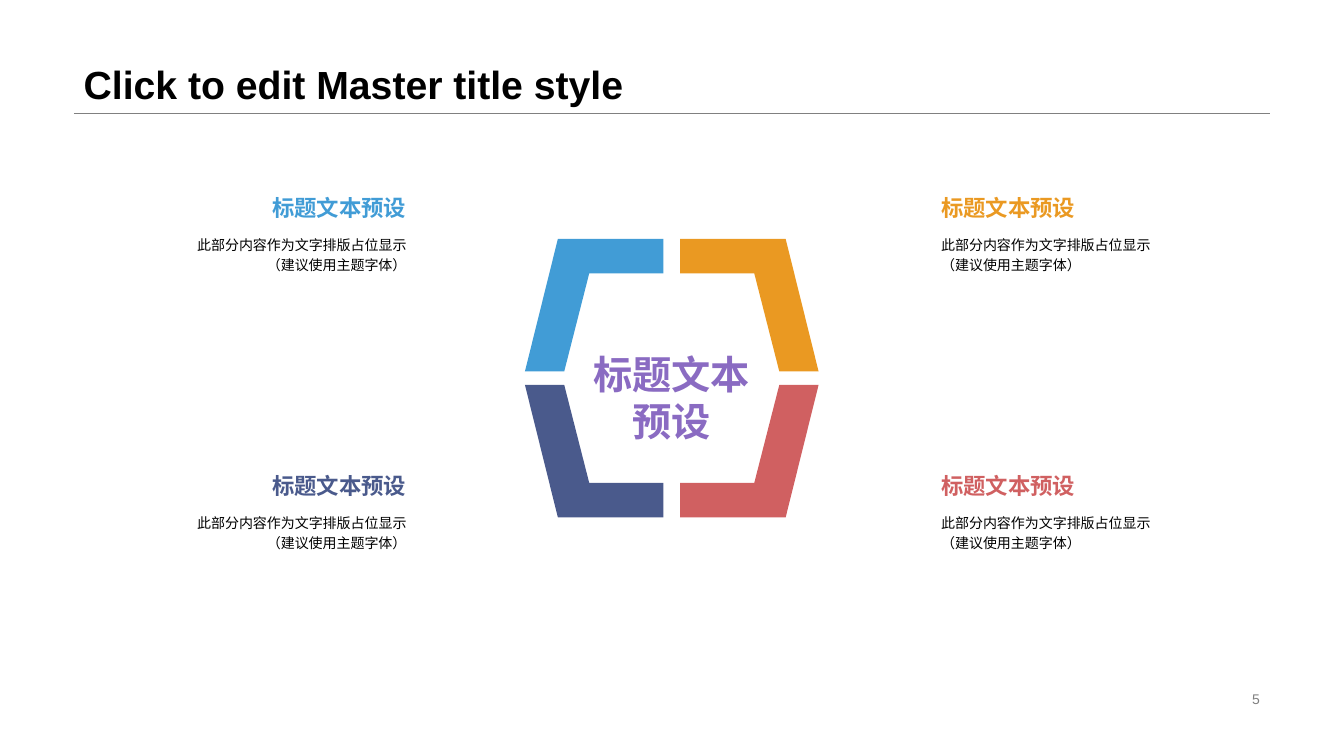
from pptx import Presentation
from pptx.dml.color import RGBColor
from pptx.enum.shapes import MSO_CONNECTOR
from pptx.enum.text import MSO_ANCHOR as Anchor, PP_ALIGN as Align
from pptx.oxml.ns import qn
from pptx.util import Cm, Pt
from lxml.etree import SubElement

BLACK = RGBColor(0x00, 0x00, 0x00)
GRAY = RGBColor(0x80, 0x80, 0x80)
BLUE = RGBColor(0x41, 0x9C, 0xD6)
ORANGE = RGBColor(0xEA, 0x99, 0x22)
NAVY = RGBColor(0x4A, 0x5A, 0x8C)
RED = RGBColor(0xD0, 0x60, 0x61)
PURPLE = RGBColor(0x8A, 0x6B, 0xC2)

HEADLINE = "Click to edit Master title style"
PAGE_NUMBER = "5"
CORE = ["标题文本", "预设"]
TOPIC = ["标题文本预设"]
DETAIL = ["此部分内容作为文字排版占位显示", "（建议使用主题字体）"]
QUADRANTS = [(-1, -1, BLUE), (1, -1, ORANGE), (-1, 1, NAVY), (1, 1, RED)]

CENTER_X, CENTER_Y = 16.93, 9.53
ARM = [(0.21, 3.51), (2.87, 3.51), (3.7, 0.17),
       (2.71, 0.17), (2.08, 2.64), (0.21, 2.64)]
COLUMNS = {-1: (3.76, 6.68, Align.RIGHT), 1: (23.52, 6.83, Align.LEFT)}
ROWS = {-1: 4.88, 1: 11.89}
TOPIC_HEIGHT, DETAIL_HEIGHT = 0.69, 1.63
TIGHT = (0.2, 0)
NORMAL = (0.25, 0.13)

deck = Presentation()
deck.slide_width, deck.slide_height = Cm(33.87), Cm(19.05)
slide = deck.slides.add_slide(deck.slide_layouts[6])


def add_text(lines, box, size, color, bold=False, align=Align.LEFT,
             anchor=Anchor.TOP, insets=NORMAL, wrap=True, spacing=1.0):
    frame = slide.shapes.add_textbox(*map(Cm, box)).text_frame
    frame.word_wrap = wrap
    frame.vertical_anchor = anchor
    frame.margin_left = frame.margin_right = Cm(insets[0])
    frame.margin_top = frame.margin_bottom = Cm(insets[1])
    paragraph = frame.paragraphs[0]
    paragraph.alignment = align
    paragraph.line_spacing = spacing
    for index, line in enumerate(lines):
        if index:
            paragraph.add_line_break()
        run = paragraph.add_run()
        run.text = line
        run.font.name = "Arial"
        run.font.size = Pt(size)
        run.font.bold = bold
        run.font.color.rgb = color


def add_arm(side, level, color):
    points = [(Cm(CENTER_X + side * x), Cm(CENTER_Y + level * y)) for x, y in ARM]
    builder = slide.shapes.build_freeform(*points[0], scale=1.0)
    builder.add_line_segments(points[1:], close=True)
    arm = builder.convert_to_shape()
    arm.shadow.inherit = False
    arm.fill.solid()
    arm.fill.fore_color.rgb = color
    arm.line.fill.background()


rule = slide.shapes.add_connector(
    MSO_CONNECTOR.STRAIGHT, Cm(1.86), Cm(2.86), Cm(32), Cm(2.86))
rule.line.color.rgb = GRAY
rule.line.width = Pt(0.25)
SubElement(rule.element.spPr, qn("a:effectLst"))

add_text([HEADLINE], (1.86, 0, 30.14, 2.86), 28, BLACK, bold=True,
         anchor=Anchor.BOTTOM, spacing=0.9)
add_text([PAGE_NUMBER], (23.92, 17.32, 8.08, 0.58), 10, GRAY,
         align=Align.RIGHT, anchor=Anchor.MIDDLE)

for side, level, color in QUADRANTS:
    left, width, align = COLUMNS[side]
    top = ROWS[level]
    add_text(DETAIL, (left, top + TOPIC_HEIGHT, width, DETAIL_HEIGHT), 10, BLACK,
             align=align, anchor=Anchor.MIDDLE, insets=TIGHT, spacing=1.2)
    add_text(TOPIC, (left, top, width, TOPIC_HEIGHT), 16, color, bold=True,
             align=align, insets=TIGHT, wrap=False)
    add_arm(side, level, color)

add_text(CORE, (14.68, 8.69, 4.5, 2.64), 28, PURPLE, bold=True,
         align=Align.CENTER, wrap=False)

deck.save("out.pptx")
